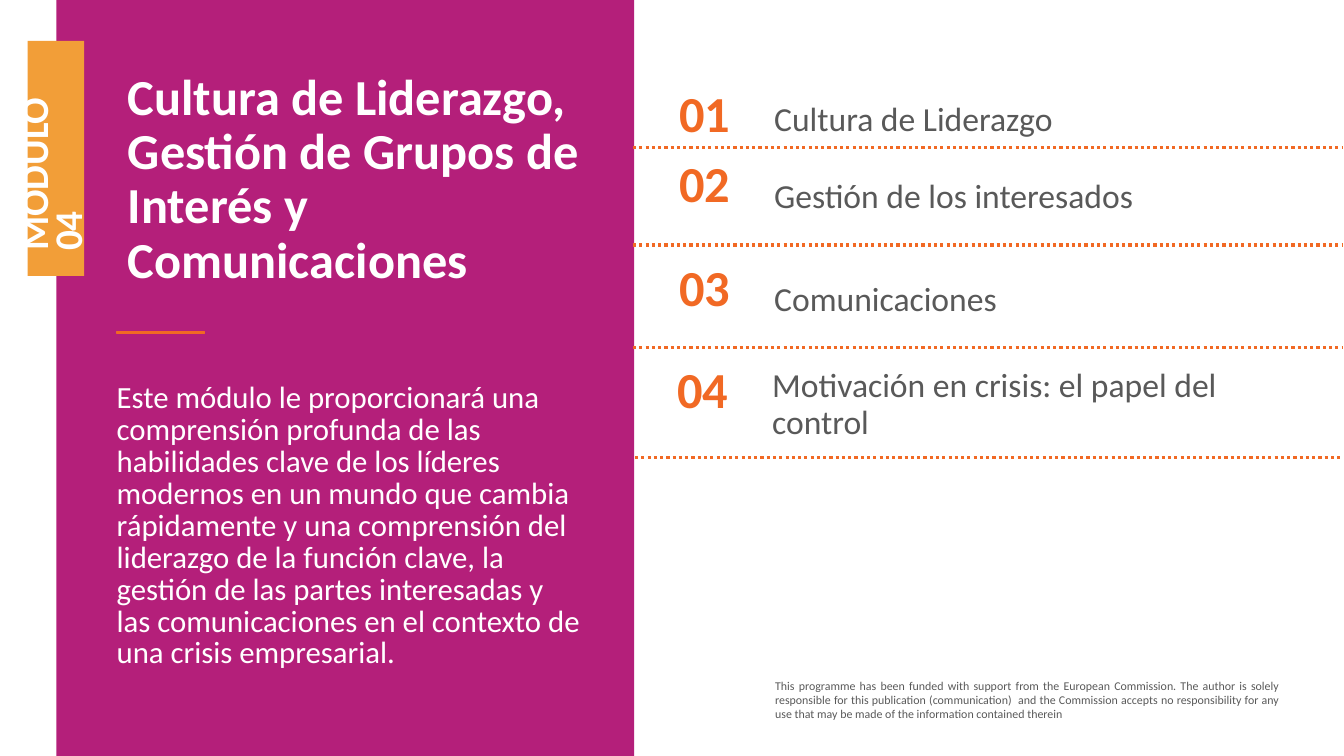
from lxml.etree import SubElement as Sub
from pptx import Presentation
from pptx.dml.color import RGBColor as RGB
from pptx.enum.dml import MSO_LINE as Dash
from pptx.enum.shapes import MSO_CONNECTOR as Conn, MSO_SHAPE as Form
from pptx.enum.text import MSO_ANCHOR as Anchor, PP_ALIGN as Align
from pptx.oxml.ns import qn
from pptx.util import Pt

PLUM, AMBER, ORANGE, GREY, WHITE = "B41F7A", "F29E38", "F16924", "595959", "FFFFFF"

TITLE = "Cultura de Liderazgo, Gestión de Grupos de Interés y Comunicaciones"
ABOUT = (
    "Este módulo le proporcionará una comprensión profunda de las habilidades "
    "clave de los líderes modernos en un mundo que cambia rápidamente y una "
    "comprensión del liderazgo de la función clave, la gestión de las partes "
    "interesadas y las comunicaciones en el contexto de una crisis empresarial."
)
FUNDING = (
    "This programme has been funded with support from the European Commission. "
    "The author is solely responsible for this publication (communication)  and "
    "the Commission accepts no responsibility for any use that may be made of "
    "the information contained therein"
)

# Label, number top, label top, label height, rule height, shift to the left
TOPICS = [
    ("Cultura de Liderazgo", 58.3, 54, 64.8, 105.1, 0),
    ("Gestión de los interesados", 108, 116.6, 49.7, 175, 0),
    ("Comunicaciones", 182.2, 190.1, 49.7, 248.4, 0),
    ("Motivación en crisis: el papel del control", 255.6, 257, 64.8, 326.9, 1.4),
]

HEAD = {"size": Pt(36), "bold": True}
BODY = {"size": Pt(22)}
TOPIC = {"size": Pt(24)}
NOTE = {"size": Pt(8.5)}
TAB = {"size": Pt(28), "bold": True}


def paint(color):
    return RGB.from_string(color)


def style(frame, words, color, font, anchor=Anchor.TOP, **form):
    """Fill a text frame with one paragraph; form holds paragraph values."""
    frame.word_wrap = True
    frame.vertical_anchor = anchor
    para = frame.paragraphs[0]
    run = para.add_run()
    run.text = words
    for name, value in ({"alignment": Align.LEFT} | form).items():
        setattr(para, name, value)
    for name, value in ({"name": "Calibri"} | font).items():
        setattr(run.font, name, value)
    run.font.color.rgb = paint(color)


def write(slide, box, words, color, font, **form):
    area = slide.shapes.add_textbox(*map(Pt, box))
    style(area.text_frame, words, color, font, **form)


def block(slide, box, color):
    """Draw a plain filled rectangle."""
    shape = slide.shapes.add_shape(Form.RECTANGLE, *map(Pt, box))
    shape.shadow.inherit = False
    shape.fill.solid()
    shape.fill.fore_color.rgb = paint(color)
    shape.line.fill.background()
    return shape


def rule(slide, left, right, top):
    """Draw a dotted level line."""
    line = slide.shapes.add_connector(Conn.STRAIGHT, *map(Pt, (left, top, right, top)))
    for name, value in {"width": Pt(2.25), "dash_style": Dash.ROUND_DOT}.items():
        setattr(line.line, name, value)
    line.line.color.rgb = paint(ORANGE)
    Sub(line._element.spPr, qn("a:effectLst"))


def panel(slide, box):
    """Place the title, accent bar and summary on a coloured panel."""
    left, top, wide, high = box
    block(slide, box, PLUM)
    write(slide, (left + 44, top + 47.5, 354, 178), TITLE, WHITE, HEAD,
          line_spacing=0.9)
    bar = block(slide, (left + 43.2, top + 236.9, 62.6, 1.4), ORANGE)
    bar.line.color.rgb = paint(ORANGE)
    bar.line.width = Pt(1)
    write(slide, (left + 36, top + 270, 345.6, 195), ABOUT, WHITE, BODY,
          line_spacing=Pt(22.8))


def tab(slide, box):
    """Place the module label, reading upwards, in a tall box."""
    left, top, wide, high = box
    mid, half = left + wide / 2, top + high / 2
    shape = block(slide, (mid - high / 2, half - wide / 2, high, wide), AMBER)
    shape.rotation = 270
    style(shape.text_frame, "MÓDULO 04", WHITE, TAB, Anchor.MIDDLE,
          line_spacing=Pt(24.4))
    shape.text_frame.paragraphs[0]._p.get_or_add_pPr().set("marL", str(Pt(10.8)))


def topics(slide, box):
    """List the numbered topics, each above a dotted rule."""
    left, top, wide, high = box
    form = {"anchor": Anchor.MIDDLE, "line_spacing": 0.9}
    for count, (label, num, text, tall, base, shift) in enumerate(TOPICS, 1):
        start = left - shift
        write(slide, (start + 26, top + num, 65.5, 49.7), f"{count:02}",
              ORANGE, HEAD, **form)
        write(slide, (start + 93.7, top + text, 374.4, tall), label,
              GREY, TOPIC, **form)
        rule(slide, left + shift, left + wide, top + base)
    write(slide, (left + 94.4, top + 481, 374.4, 38.2), FUNDING, GREY, NOTE,
          alignment=Align.JUSTIFY)


def main():
    deck = Presentation()
    deck.slide_width, deck.slide_height = Pt(960), Pt(540)
    slide = deck.slides.add_slide(deck.slide_layouts[6])
    panel(slide, (40.3, 0, 412.6, 540))
    tab(slide, (19.8, 29.2, 40.3, 167.8))
    topics(slide, (452.2, 0, 507, 540))
    deck.save("out.pptx")


if __name__ == "__main__":
    main()
